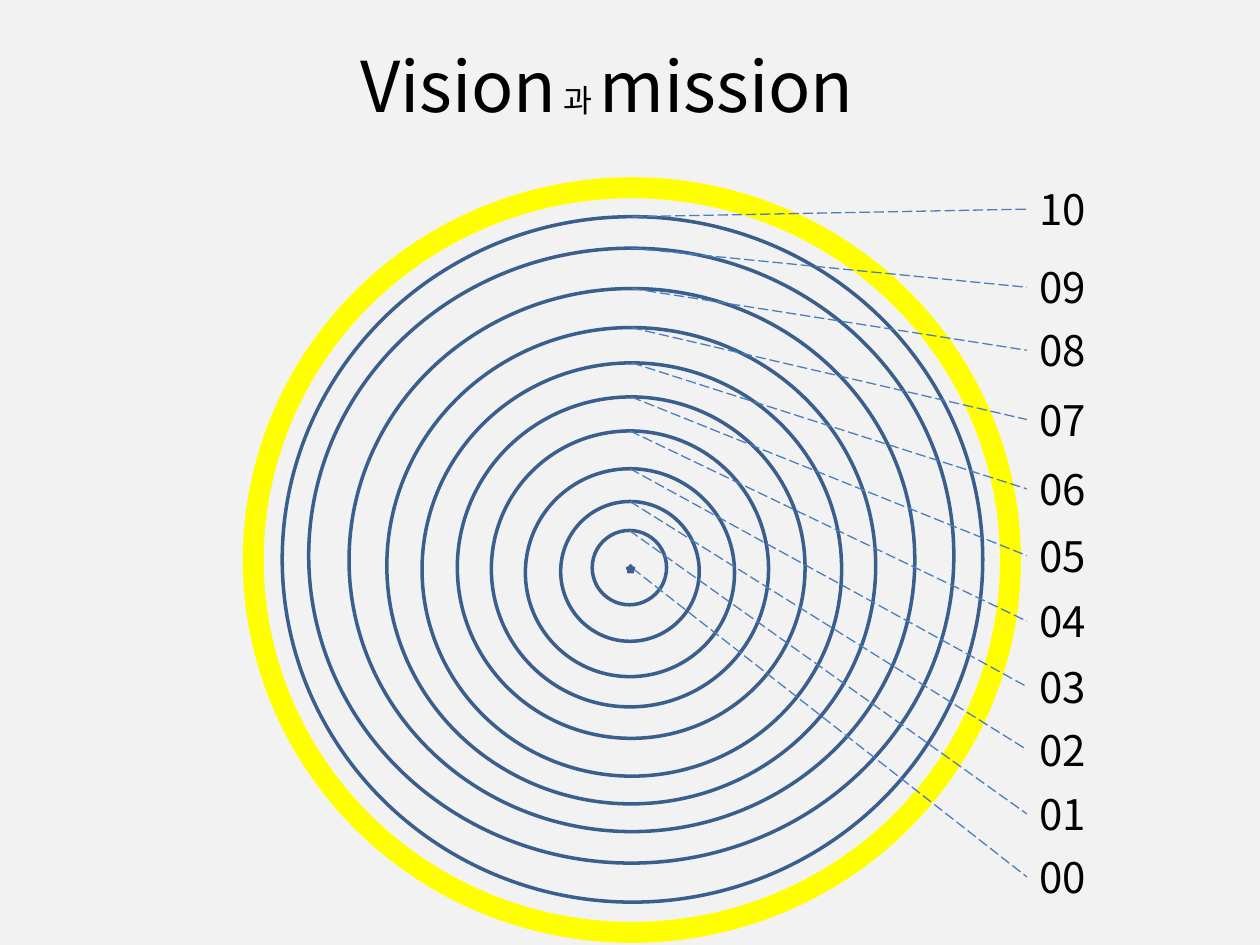
import pptx
import pptx.util
import pptx.dml.color
import pptx.enum.dml
import pptx.enum.shapes
import pptx.oxml.ns
import lxml.etree

Inches = pptx.util.Inches
Pt = pptx.util.Pt
RGBColor = pptx.dml.color.RGBColor
Preset = pptx.enum.shapes.MSO_SHAPE

BACKGROUND = RGBColor(0xF2, 0xF2, 0xF2)
OUTER_YELLOW = RGBColor(0xFF, 0xFF, 0x00)
RING_BLUE = RGBColor(0x3A, 0x5F, 0x8C)
LEADER_BLUE = RGBColor(0x4B, 0x7E, 0xBC)
STAR_BLUE = RGBColor(0x4F, 0x81, 0xBD)
TEXT_BLACK = RGBColor(0, 0, 0)
FONT = "Noto Sans CJK KR"

LABEL_LEFT = 8.15
LABEL_HEIGHT = 0.5
OUTER_RING = (2.01, 1.49, 6.01, 5.91)
CENTER_STAR = (4.98, 4.49, 0.05, 0.05)
TITLE_BOX = (2.76, 0.29, 5.04, 0.77)
TITLE_RUNS = [("Vision", 40), (" 과 ", 18), ("mission", 40)]

SCORE_RINGS = [
    ("10", (2.24, 1.72, 5.56, 5.44), 1.66),
    ("09", (2.45, 1.97, 5.12, 4.88), 2.28),
    ("08", (2.77, 2.29, 4.49, 4.31), 2.78),
    ("07", (3.07, 2.6, 3.88, 3.78), 3.33),
    ("06", (3.35, 2.88, 3.33, 3.28), 3.88),
    ("05", (3.63, 3.15, 2.76, 2.71), 4.41),
    ("04", (3.9, 3.42, 2.2, 2.19), 4.93),
    ("03", (4.17, 3.72, 1.66, 1.65), 5.45),
    ("02", (4.45, 3.98, 1.1, 1.11), 5.95),
    ("01", (4.7, 4.21, 0.59, 0.59), 6.46),
]
CENTER_SCORE = ("00", (5.02, 4.51), 6.96)


def add_outline(slide, preset, box, color, weight, fill=None):
    outline = slide.shapes.add_shape(preset, *map(Inches, box))
    outline.shadow.inherit = False
    if fill is None:
        outline.fill.background()
    else:
        outline.fill.solid()
        outline.fill.fore_color.rgb = fill
    outline.line.color.rgb = color
    outline.line.width = Pt(weight)


def add_text(slide, box, runs):
    frame = slide.shapes.add_textbox(*map(Inches, box)).text_frame
    frame.word_wrap = True
    paragraph = frame.paragraphs[0]
    for wording, size in runs:
        run = paragraph.add_run()
        run.text = wording
        run.font.size = Pt(size)
        run.font.name = FONT
        run.font.color.rgb = TEXT_BLACK
        east_asian = lxml.etree.SubElement(
            run.font._element, pptx.oxml.ns.qn("a:ea"))
        east_asian.set("typeface", FONT)


def add_leader(slide, start, end):
    leader = slide.shapes.add_connector(
        pptx.enum.shapes.MSO_CONNECTOR.STRAIGHT,
        *map(Inches, start + end))
    leader.line.color.rgb = LEADER_BLUE
    leader.line.width = Pt(0.75)
    leader.line.dash_style = pptx.enum.dml.MSO_LINE.LONG_DASH
    lxml.etree.SubElement(
        leader._element.spPr, pptx.oxml.ns.qn("a:effectLst"))


def add_score(slide, score, start, level):
    add_leader(slide, start, (LABEL_LEFT, level))
    label_box = (LABEL_LEFT, level - LABEL_HEIGHT / 2, 1.21, LABEL_HEIGHT)
    add_text(slide, label_box, [(score, 24)])


def main():
    deck = pptx.Presentation()
    deck.slide_width = Inches(10)
    deck.slide_height = Inches(7.5)
    slide = deck.slides.add_slide(deck.slide_layouts[6])
    slide.background.fill.solid()
    slide.background.fill.fore_color.rgb = BACKGROUND

    add_outline(slide, Preset.OVAL, OUTER_RING, OUTER_YELLOW, 12)
    for score, ring, level in SCORE_RINGS:
        add_outline(slide, Preset.OVAL, ring, RING_BLUE, 2)
    for score, (left, top, width, height), level in SCORE_RINGS:
        add_score(slide, score, (left + width / 2, top), level)
    add_score(slide, *CENTER_SCORE)
    add_text(slide, TITLE_BOX, TITLE_RUNS)
    add_outline(slide, Preset.STAR_5_POINT, CENTER_STAR, RING_BLUE, 2, STAR_BLUE)
    deck.save("out.pptx")


if __name__ == "__main__":
    main()
